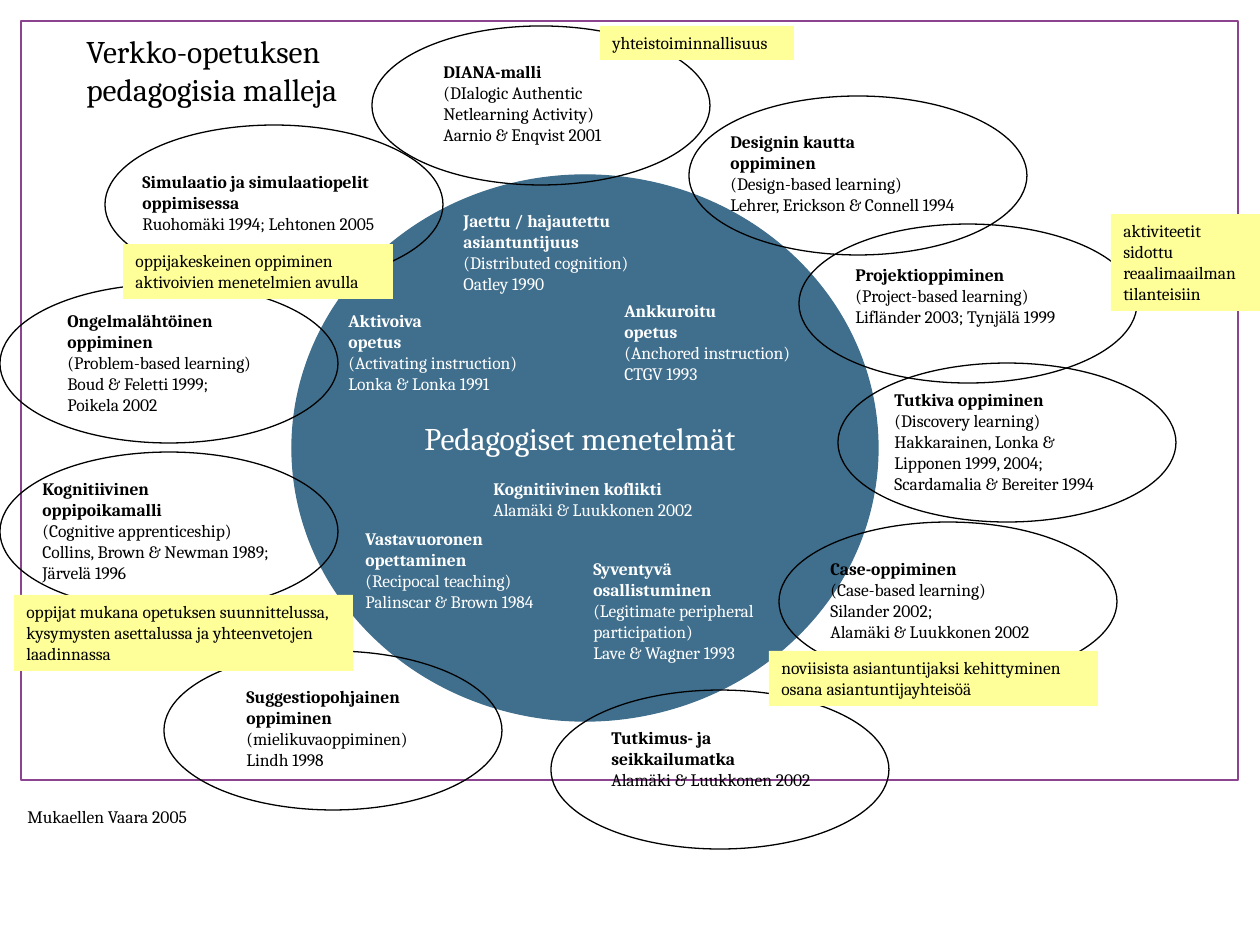
from pptx import Presentation
from pptx.dml.color import RGBColor
from pptx.enum.shapes import MSO_SHAPE as Shape
from pptx.enum.text import MSO_ANCHOR as Anchor, MSO_AUTO_SIZE as AutoSize, PP_ALIGN as Align
from pptx.util import Emu, Pt

BLACK = RGBColor(0x00, 0x00, 0x00)
WHITE = RGBColor(0xFF, 0xFF, 0xFF)
BLUE = RGBColor(0x40, 0x6F, 0x8D)
PURPLE = RGBColor(0x8D, 0x44, 0x90)
YELLOW = RGBColor(0xFF, 0xFF, 0x99)

FONT = "Cambria"
OVAL_SIZE = (338, 159)

# left, top, width, number of bold lines, lines
METHODS = [
    (451, 204, 195, 2, ["Jaettu / hajautettu", "asiantuntijuus",
                        "(Distributed cognition)", "Oatley 1990"]),
    (481, 472, 237, 1, ["Kognitiivinen koflikti", "Alamäki & Luukkonen 2002"]),
    (612, 294, 195, 2, ["Ankkuroitu", "opetus", "(Anchored instruction)", "CTGV 1993"]),
    (581, 552, 199, 2, ["Syventyvä", "osallistuminen", "(Legitimate peripheral",
                        "participation)", "Lave & Wagner 1993"]),
    (353, 522, 212, 2, ["Vastavuoronen", "opettaminen",
                        "(Recipocal teaching)", "Palinscar & Brown 1984"]),
    (336, 304, 197, 2, ["Aktivoiva", "opetus",
                        "(Activating instruction)", "Lonka & Lonka 1991"]),
]

# oval corner, then the label as above
MODELS = [
    ((105, 125), (130, 165, 282, 2, ["Simulaatio ja simulaatiopelit", "oppimisessa",
                                     "Ruohomäki 1994; Lehtonen 2005"])),
    ((372, 26), (431, 55, 198, 1, ["DIANA-malli", "(DIalogic Authentic",
                                   "Netlearning Activity)", "Aarnio & Enqvist 2001"])),
    ((0, 284), (55, 304, 222, 2, ["Ongelmalähtöinen", "oppiminen", "(Problem-based learning)",
                                  "Boud & Feletti 1999;", "Poikela 2002"])),
    ((0, 452), (30, 472, 275, 2, ["Kognitiivinen", "oppipoikamalli",
                                  "(Cognitive apprenticeship)",
                                  "Collins, Brown & Newman 1989;", "Järvelä 1996"])),
    ((164, 651), (234, 680, 193, 2, ["Suggestiopohjainen", "oppiminen",
                                     "(mielikuvaoppiminen)", "Lindh 1998"])),
    ((551, 690), (599, 721, 237, 2, ["Tutkimus- ja", "seikkailumatka",
                                     "Alamäki & Luukkonen 2002"])),
    ((779, 522), (818, 552, 237, 1, ["Case-oppiminen", "(Case-based learning)",
                                     "Silander 2002;", "Alamäki & Luukkonen 2002"])),
    ((838, 363), (882, 383, 248, 1, ["Tutkiva oppiminen", "(Discovery learning)",
                                     "Hakkarainen, Lonka &", "Lipponen 1999, 2004;",
                                     "Scardamalia & Bereiter 1994"])),
    ((799, 224), (843, 258, 244, 1, ["Projektioppiminen", "(Project-based learning)",
                                     "Lifländer 2003; Tynjälä 1999"])),
    ((689, 96), (718, 125, 276, 2, ["Designin kautta", "oppiminen", "(Design-based learning)",
                                    "Lehrer, Erickson & Connell 1994"])),
]

# left, top, width, rows of text, wraps, lines
NOTES = [
    (769, 651, 329, 2, False, ["noviisista asiantuntijaksi kehittyminen",
                               "osana asiantuntijayhteisöä"]),
    (14, 595, 339, 3, True, ["oppijat mukana opetuksen suunnittelussa, kysymysten "
                             "asettalussa ja yhteenvetojen laadinnassa"]),
    (123, 244, 270, 2, False, ["oppijakeskeinen oppiminen", "aktivoivien menetelmien avulla"]),
    (600, 26, 194, 1, False, ["yhteistoiminnallisuus"]),
    (1111, 214, 149, 4, True, ["aktiviteetit", "sidottu", "reaalimaailman", "tilanteisiin"]),
]


def px(length):
    return Emu(round(length * 914400 / 126))


def text_height(rows, size=10):
    return round(13 + rows * size * 2.1)


def add_outline(slide, kind, left, top, width, height, fill=None, line=None):
    shape = slide.shapes.add_shape(kind, px(left), px(top), px(width), px(height))
    shape.shadow.inherit = False
    if fill is None:
        shape.fill.background()
    else:
        shape.fill.solid()
        shape.fill.fore_color.rgb = fill
    if line is None:
        shape.line.fill.background()
    else:
        shape.line.color.rgb = line
        shape.line.width = Pt(0.75)
    return shape


def write_lines(shape, lines, color=BLACK, size=10, bold_lines=0, wrap=False):
    frame = shape.text_frame
    frame.text = "\n".join(lines)
    frame.word_wrap = wrap
    frame.auto_size = AutoSize.SHAPE_TO_FIT_TEXT
    frame.vertical_anchor = Anchor.TOP
    for row, paragraph in enumerate(frame.paragraphs):
        paragraph.alignment = Align.LEFT
        for run in paragraph.runs:
            run.font.name = FONT
            run.font.size = Pt(size)
            run.font.bold = row < bold_lines
            run.font.color.rgb = color


def add_label(slide, left, top, width, bold_lines, lines, color=BLACK, size=10):
    label = slide.shapes.add_textbox(px(left), px(top), px(width),
                                     px(text_height(len(lines), size)))
    write_lines(label, lines, color, size, bold_lines)


def add_model(slide, corner, label):
    add_label(slide, *label)
    add_outline(slide, Shape.OVAL, *corner, *OVAL_SIZE, line=BLACK)


def add_note(slide, left, top, width, rows, wrap, lines):
    note = add_outline(slide, Shape.RECTANGLE, left, top, width, text_height(rows), fill=YELLOW)
    write_lines(note, lines, wrap=wrap)


def main():
    deck = Presentation()
    deck.slide_width, deck.slide_height = px(1260), px(945)
    slide = deck.slides.add_slide(deck.slide_layouts[6])

    # Frame and central circle
    add_outline(slide, Shape.RECTANGLE, 21, 21, 1217, 759, line=PURPLE)
    add_outline(slide, Shape.OVAL, 292, 175, 586, 546, fill=BLUE, line=BLUE)

    # Methods inside the circle, models around it
    for method in METHODS:
        add_label(slide, *method, color=WHITE)
    for corner, label in MODELS:
        add_model(slide, corner, label)

    # Headings and source
    add_label(slide, 412, 413, 374, 0, ["Pedagogiset menetelmät"], WHITE, 18)
    add_label(slide, 74, 26, 304, 0, ["Verkko-opetuksen", "pedagogisia malleja"], size=18)
    add_label(slide, 15, 800, 199, 0, ["Mukaellen Vaara 2005"])

    # Yellow notes
    for note in NOTES:
        add_note(slide, *note)

    deck.save("out.pptx")


if __name__ == "__main__":
    main()
